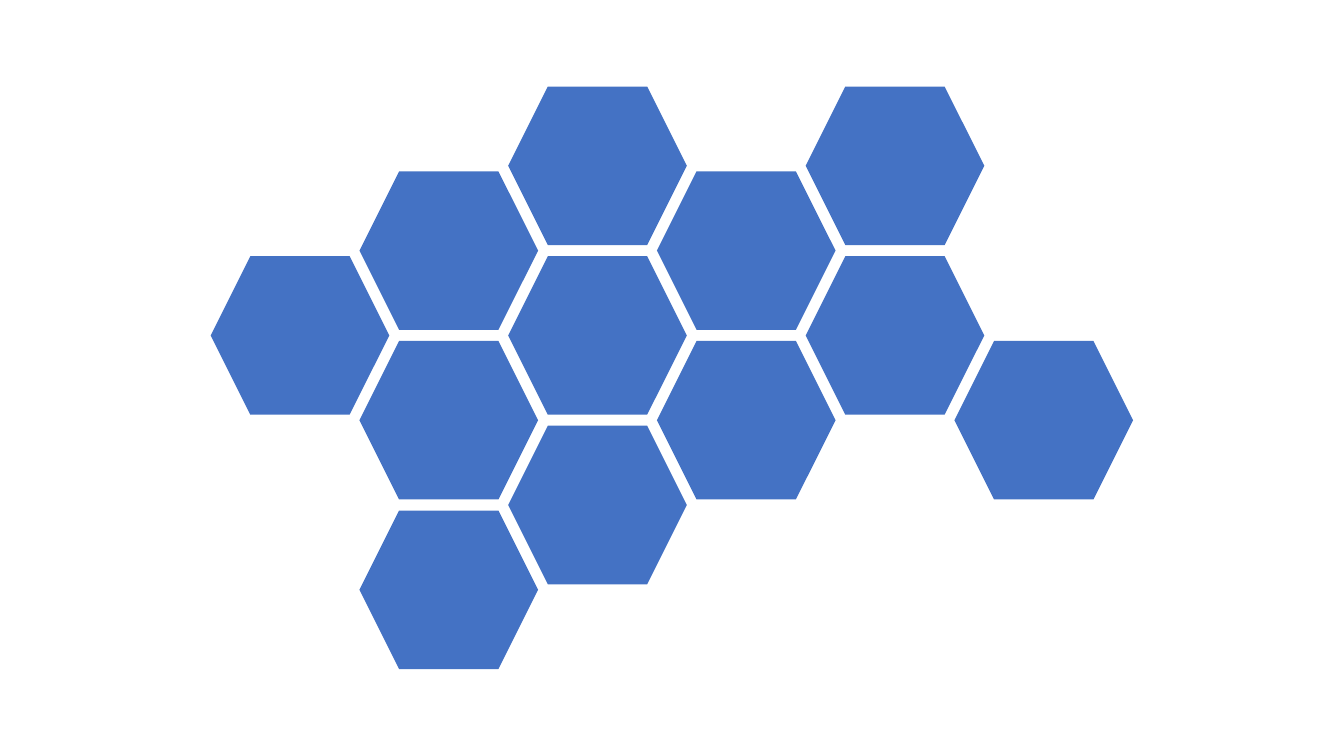
import pptx
import pptx.dml.color
import pptx.enum.shapes
import pptx.util

Pt = pptx.util.Pt

# Honeycomb geometry, in points
LEFT, TOP = 150.5, 61.8
WIDTH, HEIGHT = 127.6, 113.3
COLUMN_STEP, HALF_ROW_STEP = 106.25, 60.57
BLUE = "4472C4"

# (column, half row) of each cell, back to front
CELLS = [
    (1, 1), (1, 3), (1, 5),
    (2, 2), (2, 4), (2, 0),
    (3, 1), (4, 0), (0, 2),
    (4, 2), (3, 3), (5, 3),
]


def color(value):
    return pptx.dml.color.RGBColor.from_string(value)


def add_hexagon(page, column, half_row):
    hexagon = page.shapes.add_shape(
        pptx.enum.shapes.MSO_SHAPE.HEXAGON,
        Pt(LEFT + column * COLUMN_STEP),
        Pt(TOP + half_row * HALF_ROW_STEP),
        Pt(WIDTH),
        Pt(HEIGHT),
    )
    hexagon.shadow.inherit = False
    hexagon.fill.solid()
    hexagon.fill.fore_color.rgb = color(BLUE)
    hexagon.line.fill.background()


def main():
    # Blank widescreen page
    deck = pptx.Presentation()
    for name, value in {"slide_width": 960, "slide_height": 540}.items():
        setattr(deck, name, Pt(value))
    page = deck.slides.add_slide(deck.slide_layouts[6])

    # Honeycomb
    for column, half_row in CELLS:
        add_hexagon(page, column, half_row)

    deck.save("out.pptx")


if __name__ == "__main__":
    main()
